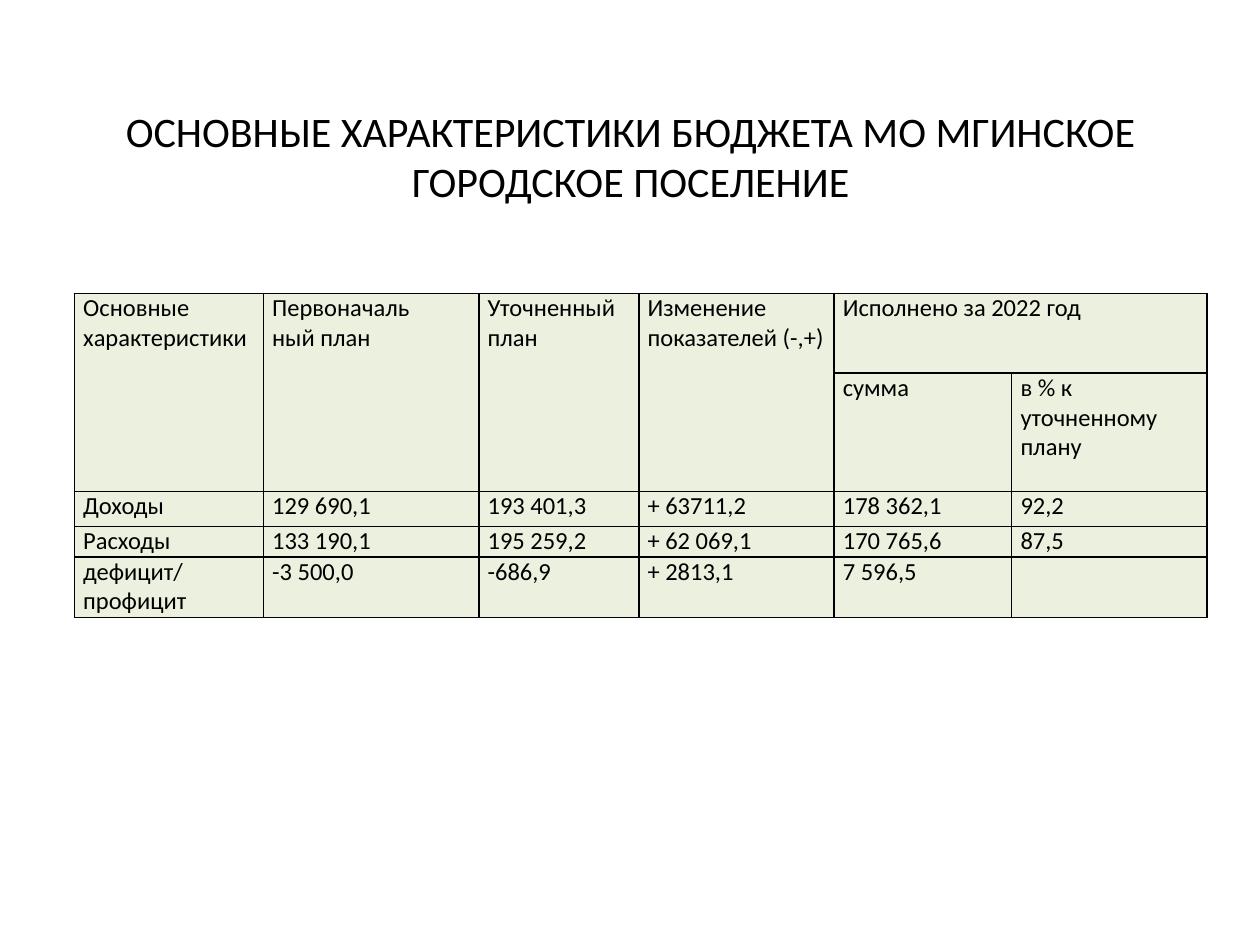
from pptx import Presentation
from pptx.dml.color import RGBColor
from pptx.enum import text as t
from pptx.oxml import parse_xml
from pptx.oxml.ns import nsdecls
from pptx.util import Inches, Pt


def color(code):
    return RGBColor.from_string(code)


class Deck:
    face = "Calibri"
    ink = "000000"
    tint = "EBF1DE"

    def __init__(self):
        self.prs = Presentation()
        self.prs.slide_width = Inches(10)
        self.prs.slide_height = Inches(7.5)
        self.slide = self.prs.slides.add_slide(self.prs.slide_layouts[5])

    def style(self, para, size):
        font = para.font
        font.name = self.face
        font.size = Pt(size)
        font.color.rgb = color(self.ink)

    def title(self, words, box):
        shape = self.slide.shapes.title
        shape.left, shape.top, shape.width, shape.height = map(Inches, box)
        frame = shape.text_frame
        frame.text = words
        frame.word_wrap = True
        frame.vertical_anchor = t.MSO_ANCHOR.MIDDLE
        para = frame.paragraphs[0]
        para.alignment = t.PP_ALIGN.CENTER
        self.style(para, 24)

    def border(self, cell):
        props = cell._tc.get_or_add_tcPr()
        for spot, side in enumerate(("lnL", "lnR", "lnT", "lnB")):
            props.insert(spot, parse_xml(
                f'<a:{side} {nsdecls("a")} w="{Pt(1)}"><a:solidFill>'
                f'<a:srgbClr val="{self.ink}"/></a:solidFill></a:{side}>'))

    def cell(self, cell, words):
        cell.margin_left = cell.margin_right = Inches(0.07)
        cell.margin_top = cell.margin_bottom = 0
        cell.fill.solid()
        cell.fill.fore_color.rgb = color(self.tint)
        self.border(cell)
        cell.text = words
        for para in cell.text_frame.paragraphs:
            self.style(para, 14)

    def table(self, left, top, cols, rows, data, spans):
        grid = self.slide.shapes.add_table(
            len(rows), len(cols), Inches(left), Inches(top),
            Inches(sum(cols)), Inches(sum(rows))).table
        grid.first_row = grid.horz_banding = False
        for col, width in zip(grid.columns, cols):
            col.width = Inches(width)
        for row, height, line in zip(grid.rows, rows, data):
            row.height = Inches(height)
            for cell, words in zip(row.cells, line):
                self.cell(cell, words)
        for start, end in spans:
            grid.cell(*start).merge(grid.cell(*end))


def main():
    deck = Deck()
    deck.title("ОСНОВНЫЕ ХАРАКТЕРИСТИКИ БЮДЖЕТА МО МГИНСКОЕ ГОРОДСКОЕ ПОСЕЛЕНИЕ",
               (0.51, 0.3, 8.99, 1.87))
    data = [
        ["Основные характеристики", "Первоначаль\nный план", "Уточненный\nплан",
         "Изменение показателей (-,+)", "Исполнено за 2022 год", ""],
        ["", "", "", "", "сумма", "в % к уточненному плану"],
        ["Доходы", "129 690,1", "193 401,3", "+ 63711,2", "178 362,1", "92,2"],
        ["Расходы", "133 190,1", "195 259,2", "+ 62 069,1", "170 765,6", "87,5"],
        ["дефицит/профицит", "-3 500,0", "-686,9", "+ 2813,1", "7 596,5", ""],
    ]
    spans = [((0, col), (1, col)) for col in range(4)] + [((0, 4), (0, 5))]
    deck.table(0.59, 2.33, [1.5, 1.71, 1.27, 1.55, 1.41, 1.55],
               [0.63, 0.94, 0.28, 0.24, 0.48], data, spans)
    deck.prs.save("out.pptx")


if __name__ == "__main__":
    main()
